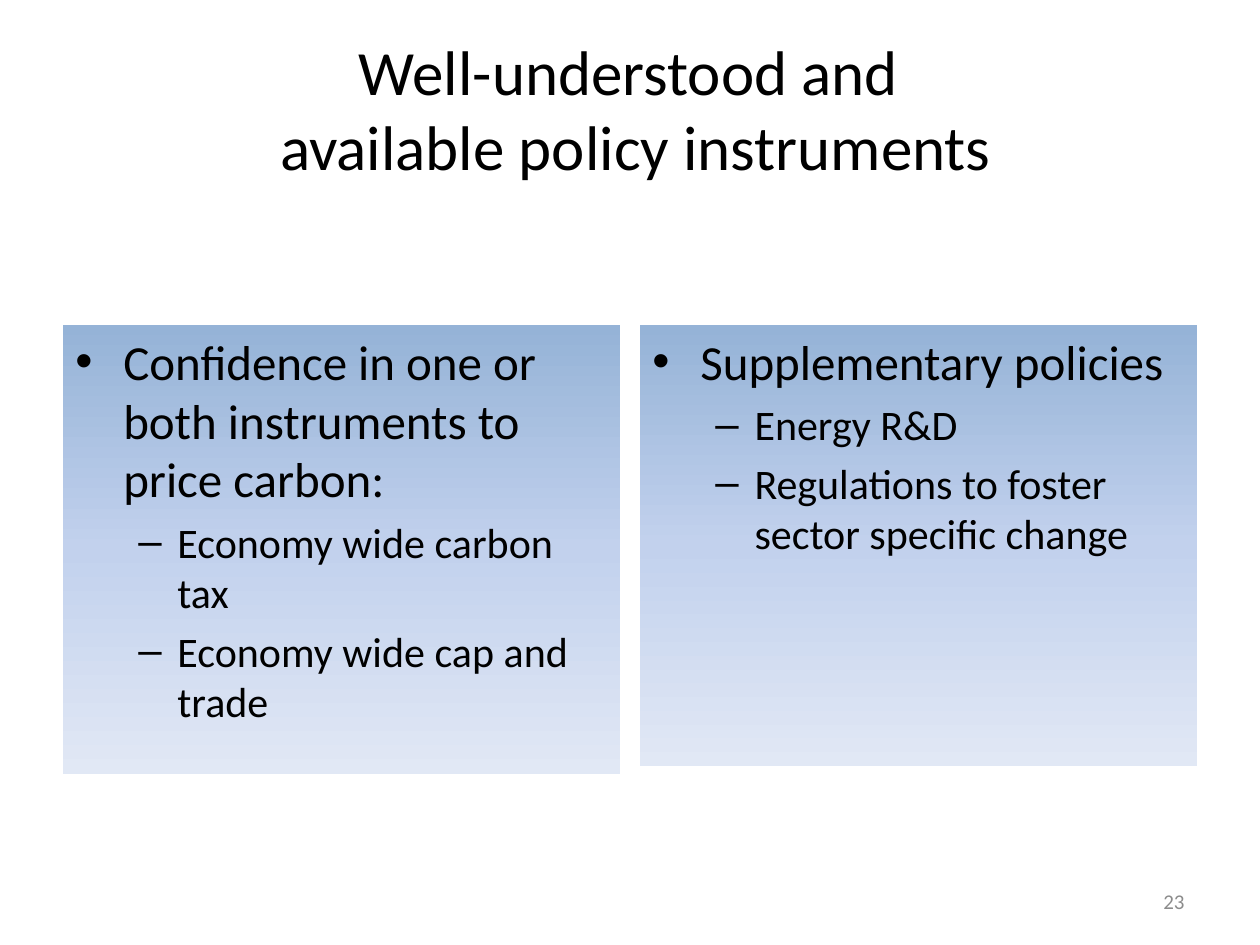
from copy import deepcopy
from pptx import Presentation
from pptx.dml.color import RGBColor
from pptx.enum.shapes import MSO_SHAPE as Shape
from pptx.enum.text import MSO_ANCHOR as Anchor, PP_ALIGN as Align
from pptx.oxml.ns import qn
from pptx.oxml.xmlchemy import OxmlElement as Node
from pptx.util import Inches, Pt


def color(code):
    return RGBColor.from_string(code)


def write(para, text, size=28, ink="000000", font="Calibri", align=Align.LEFT):
    para.text = text
    para.alignment = align
    for run in para.runs:
        run.font.name = font
        run.font.size = Pt(size)
        run.font.color.rgb = color(ink)


class Deck:
    shades = [(0, "95B3D7"), (0.5, "C2D1ED"), (1, "E1E8F5")]
    levels = [("•", 28, 0.38, 0.38), ("–", 24, 0.81, 0.31)]

    def __init__(self, wide, high):
        self.show = Presentation()
        self.show.slide_width = Inches(wide)
        self.show.slide_height = Inches(high)
        self.slide = self.show.slides.add_slide(self.show.slide_layouts[6])

    def label(self, box, text, **style):
        frame = self.slide.shapes.add_textbox(*map(Inches, box)).text_frame
        frame.word_wrap = True
        frame.vertical_anchor = Anchor.MIDDLE
        write(frame.paragraphs[0], text, **style)

    def shade(self, shape):
        fill = shape.fill
        fill.gradient()
        fill.gradient_angle = 270
        first = next(shape._element.iter(qn("a:gs")))
        first.addnext(deepcopy(first))
        for stop, (place, code) in zip(fill.gradient_stops, self.shades):
            stop.position = place
            stop.color.rgb = color(code)

    def bullet(self, para, text, level):
        mark, size, left, hang = self.levels[level]
        write(para, text, size=size)
        para.level = level
        para.space_before = Pt(size * 0.2)
        props = para._p.get_or_add_pPr()
        props.set("marL", str(Inches(left)))
        props.set("indent", str(-Inches(hang)))
        face = Node("a:buFont")
        face.set("typeface", "Arial")
        sign = Node("a:buChar")
        sign.set("char", mark)
        props.extend([face, sign])

    def panel(self, box, items):
        shape = self.slide.shapes.add_shape(Shape.RECTANGLE, *map(Inches, box))
        shape.shadow.inherit = False
        shape.line.fill.background()
        self.shade(shape)
        frame = shape.text_frame
        frame.word_wrap = True
        frame.vertical_anchor = Anchor.TOP
        for spot, text in enumerate(items):
            para = frame.add_paragraph() if spot else frame.paragraphs[0]
            self.bullet(para, text, min(spot, 1))


def main():
    deck = Deck(10, 7.5)
    deck.label((0.17, 0.17, 9.75, 1.37),
               "Well-understood and \vavailable policy instruments",
               size=36, align=Align.CENTER)
    deck.panel((0.5, 2.58, 4.42, 3.56), [
        "Confidence in one or both instruments to price carbon:",
        "Economy wide carbon tax",
        "Economy wide cap and trade",
    ])
    deck.panel((5.08, 2.58, 4.42, 3.5), [
        "Supplementary policies",
        "Energy R&D",
        "Regulations to foster sector specific change",
    ])
    deck.label((7.17, 6.95, 2.33, 0.4), "23",
               size=12, ink="8C8C8C", align=Align.RIGHT)
    deck.show.save("out.pptx")


if __name__ == "__main__":
    main()
